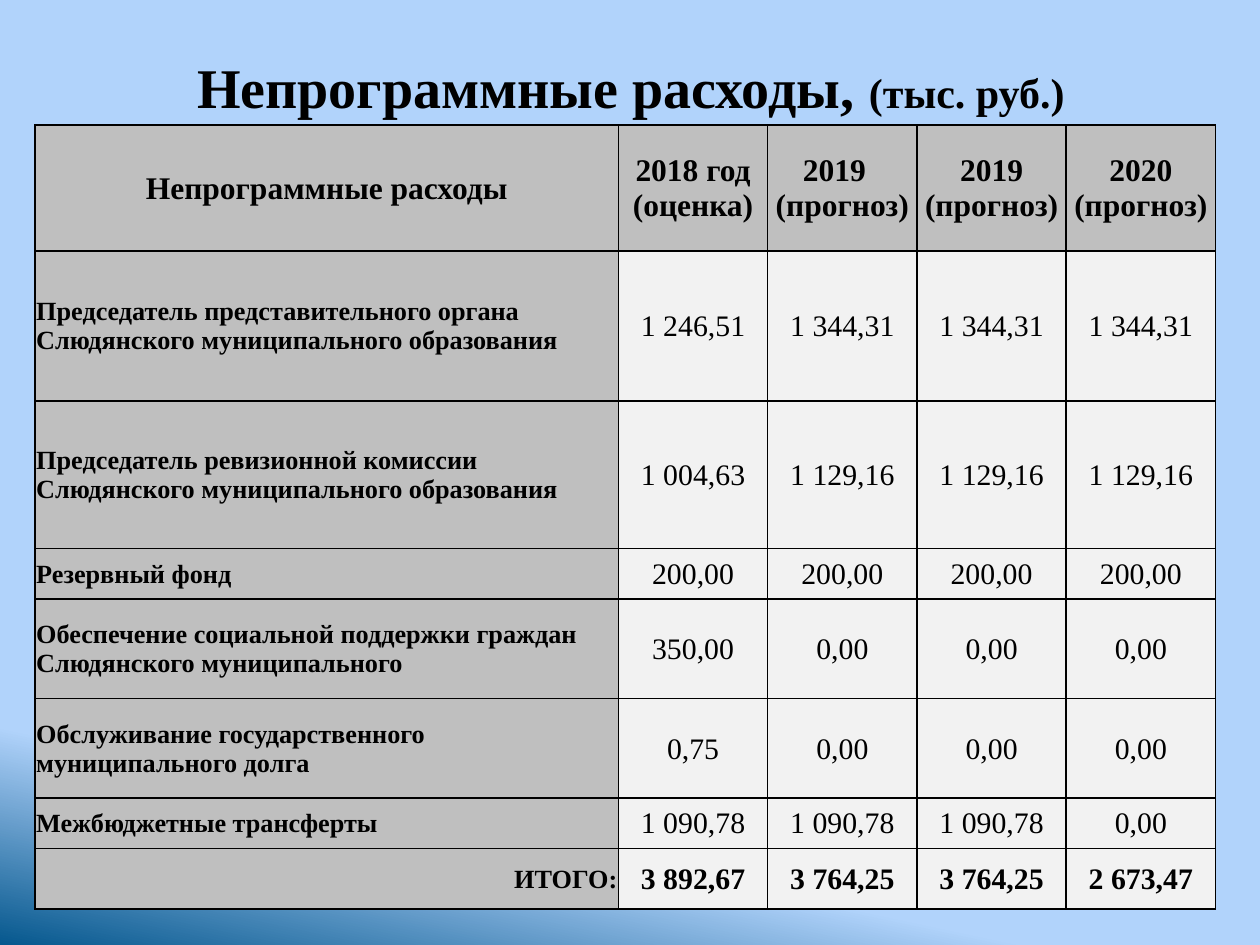
from lxml import etree
from pptx import Presentation
from pptx.dml.color import RGBColor
from pptx.enum.text import MSO_ANCHOR, PP_ALIGN
from pptx.oxml.ns import qn
from pptx.util import Pt

LEFT, MID, RIGHT = PP_ALIGN.LEFT, PP_ALIGN.CENTER, PP_ALIGN.RIGHT
CENTRE = MSO_ANCHOR.MIDDLE

FACE = "Times New Roman"
BLACK, GREY, PALE = "000000", "BFBFBF", "F2F2F2"
SKY, NAVY = "B1D3FB", "06588E"

WIDTHS = [333.4] + [85.3] * 4
HEIGHTS = [72, 85.7, 84.2, 29, 57, 56.7, 28.8, 34.6]
ROWS = [
    ["Непрограммные расходы", "2018 год (оценка)", "2019   (прогноз)",
     "2019 (прогноз)", "2020 (прогноз)"],
    ["Председатель представительного органа Слюдянского муниципального образования",
     "1 246,51", "1 344,31", "1 344,31", "1 344,31"],
    ["Председатель ревизионной комиссии Слюдянского муниципального образования",
     "1 004,63", "1 129,16", "1 129,16", "1 129,16"],
    ["Резервный фонд", "200,00", "200,00", "200,00", "200,00"],
    ["Обеспечение социальной поддержки граждан Слюдянского муниципального",
     "350,00", "0,00", "0,00", "0,00"],
    ["Обслуживание государственного муниципального долга",
     "0,75", "0,00", "0,00", "0,00"],
    ["Межбюджетные трансферты", "1 090,78", "1 090,78", "1 090,78", "0,00"],
    ["ИТОГО:", "3 892,67", "3 764,25", "3 764,25", "2 673,47"],
]


def color(code):
    return RGBColor.from_string(code)


def set_font(font, size, bold=True):
    font.name, font.size, font.bold = FACE, Pt(size), bold
    font.color.rgb = color(BLACK)


def paint_back(slide):
    fill = slide.background.fill
    fill.gradient()
    fill.gradient_angle = 258
    for stop, place, code in zip(fill.gradient_stops, (0.82, 1), (SKY, NAVY)):
        stop.position = place
        stop.color.rgb = color(code)


def add_title(slide):
    title = slide.shapes.title
    title.left, title.top = Pt(36.5), Pt(15)
    title.width, title.height = Pt(648), Pt(68)
    frame = title.text_frame
    frame.vertical_anchor = CENTRE
    para = frame.paragraphs[0]
    para.alignment = MID
    for text, size in (("Непрограммные расходы, ", 32), ("(тыс. руб.)", 24)):
        run = para.add_run()
        run.text = text
        set_font(run.font, size)


def add_edges(cell):
    # Border lines must come before the fill
    props = cell._tc.get_or_add_tcPr()
    for spot, side in enumerate(("lnL", "lnR", "lnT", "lnB")):
        line = etree.Element(qn("a:" + side), w=str(Pt(1)))
        solid = etree.SubElement(line, qn("a:solidFill"))
        etree.SubElement(solid, qn("a:srgbClr"), val=BLACK)
        props.insert(spot, line)


def fill_cell(cell, text, size, bold, align, back):
    cell.text = text
    cell.vertical_anchor = CENTRE
    cell.margin_left = cell.margin_right = cell.margin_top = Pt(0.7)
    cell.margin_bottom = Pt(0)
    cell.fill.solid()
    cell.fill.fore_color.rgb = color(back)
    para = cell.text_frame.paragraphs[0]
    para.alignment = align
    set_font(para.font, size, bold)
    add_edges(cell)


def add_grid(slide):
    table = slide.shapes.add_table(
        len(ROWS), len(WIDTHS), Pt(20), Pt(71.4),
        Pt(sum(WIDTHS)), Pt(sum(HEIGHTS))).table
    for col, width in zip(table.columns, WIDTHS):
        col.width = Pt(width)
    for row, height in zip(table.rows, HEIGHTS):
        row.height = Pt(height)
    last = len(ROWS) - 1
    for r, texts in enumerate(ROWS):
        for c, text in enumerate(texts):
            if r == 0:  # header
                style = 18, True, MID, GREY
            elif c == 0:  # row label
                style = 15, True, RIGHT if r == last else LEFT, GREY
            else:  # amount, bold in the total row
                style = 17, r == last, MID, PALE
            fill_cell(table.cell(r, c), text, *style)


def main():
    deck = Presentation()
    deck.slide_width, deck.slide_height = Pt(720), Pt(540)
    slide = deck.slides.add_slide(deck.slide_layouts[5])
    paint_back(slide)
    add_title(slide)
    add_grid(slide)
    deck.save("out.pptx")


if __name__ == "__main__":
    main()
